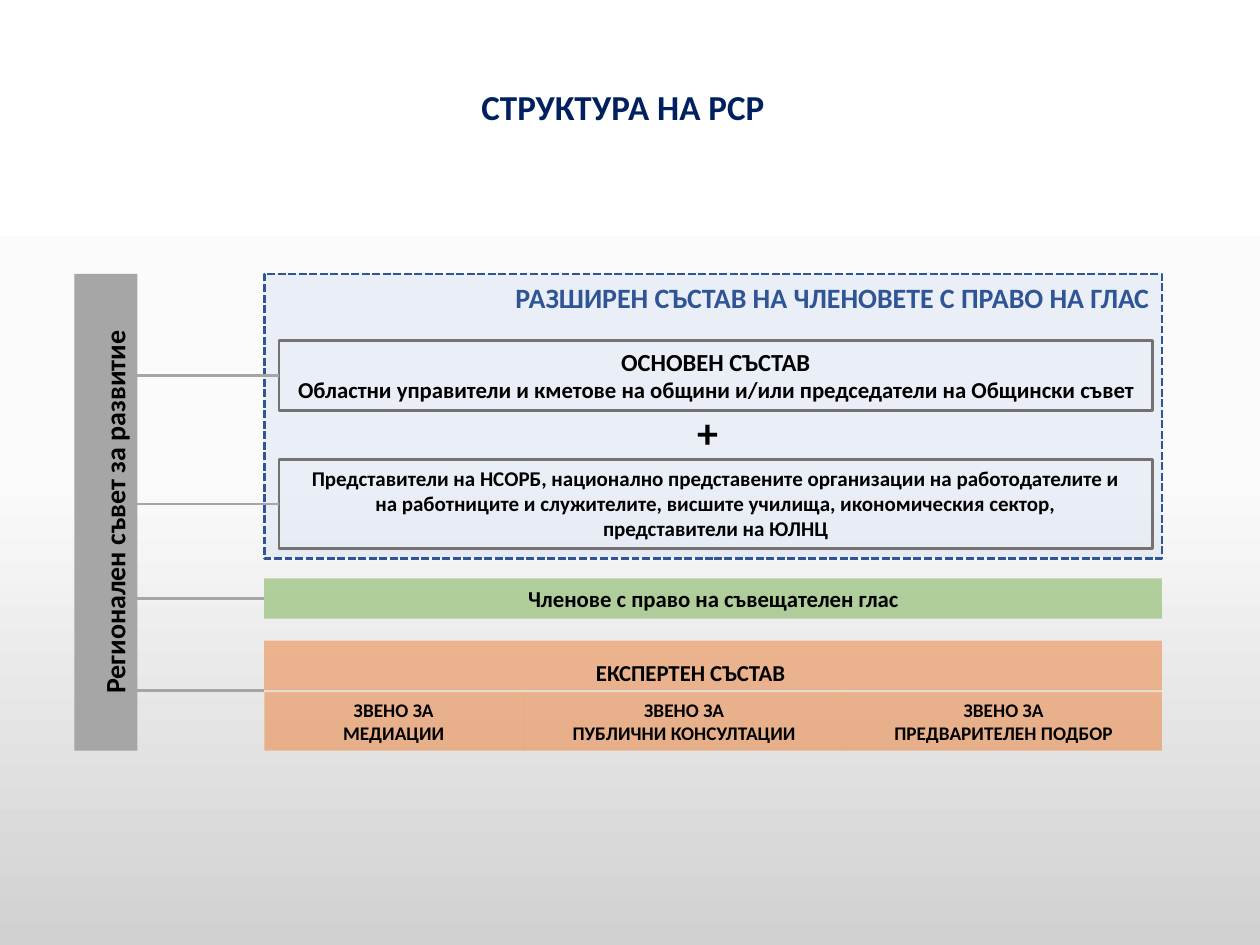
"""Build a one-page diagram of the structure of a regional development council."""
from copy import deepcopy

from lxml import etree
from pptx import Presentation
from pptx.dml.color import RGBColor
from pptx.enum.dml import MSO_LINE
from pptx.enum.shapes import MSO_CONNECTOR, MSO_SHAPE
from pptx.enum.text import MSO_ANCHOR, MSO_AUTO_SIZE, PP_ALIGN
from pptx.oxml.ns import qn
from pptx.util import Pt

RECTANGLE = MSO_SHAPE.RECTANGLE
STRAIGHT = MSO_CONNECTOR.STRAIGHT
DASHED = MSO_LINE.SQUARE_DOT
TOP, MIDDLE = MSO_ANCHOR.TOP, MSO_ANCHOR.MIDDLE
CENTER, RIGHT = PP_ALIGN.CENTER, PP_ALIGN.RIGHT
NO_AUTOFIT = MSO_AUTO_SIZE.NONE
LEFT_SIDE = 1

COLORS = {
    "text": "000000", "title": "002060", "heading": "2F5597",
    "panel": "DAE3F3", "frame": "767171", "bar": "A6A6A6",
    "link": "A5A5A5", "advisory": "70AD47", "expert": "ED7D31",
}
BACKDROP = [(0, "FFFFFF"), (0.5, "FBFBFB"), (1, "D1D1D1")]


class Diagram:
    """Hold the style and the current page, and draw each kind of element."""

    font = "Calibri"
    line_width = 1.5

    def __init__(self, page):
        self.page = page

    def color(self, name):
        return RGBColor.from_string(COLORS[name])

    def backdrop(self, stops):
        fill = self.page.background.fill
        fill.gradient()
        fill.gradient_angle = 270
        stop_list = self.page.element.find(".//" + qn("a:gsLst"))
        stop_list.insert(1, deepcopy(stop_list[0]))
        for stop, (position, value) in zip(fill.gradient_stops, stops):
            stop.position = position
            stop.color.rgb = RGBColor.from_string(value)

    def set_text(self, shape, lines, color="text", align=CENTER, anchor=TOP,
                 spacing=1, wrap=True, right_inset=7.2):
        frame = shape.text_frame
        frame.auto_size = NO_AUTOFIT
        frame.word_wrap = wrap
        frame.vertical_anchor = anchor
        frame.margin_right = Pt(right_inset)
        frame.text = "\n".join(text for text, size in lines)
        for para, (text, size) in zip(frame.paragraphs, lines):
            para.alignment = align
            para.line_spacing = spacing
            para.font.name = self.font
            para.font.size = Pt(size)
            para.font.bold = True
            para.font.color.rgb = self.color(color)

    def title(self, bounds, text):
        title = self.page.shapes.title
        title.left, title.top, title.width, title.height = map(Pt, bounds)
        self.set_text(title, [(text, 20)], "title", spacing=1.5, wrap=False)

    def label(self, bounds, text, size):
        box = self.page.shapes.add_textbox(*map(Pt, bounds))
        self.set_text(box, [(text, size)], wrap=False)

    def box(self, bounds, lines, fill=None, opacity=100, line=None,
            dash=None, **text_style):
        box = self.page.shapes.add_shape(RECTANGLE, *map(Pt, bounds))
        box.shadow.inherit = False
        if fill:
            box.fill.solid()
            box.fill.fore_color.rgb = self.color(fill)
            if opacity < 100:
                tint = box.element.spPr.find(".//" + qn("a:srgbClr"))
                etree.SubElement(tint, qn("a:alpha"), val=str(opacity * 1000))
        else:
            box.fill.background()
        if line:
            box.line.color.rgb = self.color(line)
            box.line.width = Pt(self.line_width)
            if dash:
                box.line.dash_style = dash
        else:
            box.line.fill.background()
        self.set_text(box, lines, **text_style)
        return box

    def upright_bar(self, left, top, width, height, text):
        offset = (height - width) / 2
        bar = self.box((left - offset, top + offset, height, width),
                       [(text, 16)], "bar", anchor=MIDDLE, spacing=1.5)
        bar.rotation = 270

    def link(self, start, end, y, target=None):
        link = self.page.shapes.add_connector(
            STRAIGHT, Pt(start), Pt(y), Pt(end), Pt(y))
        link.line.color.rgb = self.color("link")
        link.line.width = Pt(self.line_width)
        etree.SubElement(link.element.spPr, qn("a:effectLst"))
        if target is not None:
            link.end_connect(target, LEFT_SIDE)


def main():
    deck = Presentation()
    deck.slide_width, deck.slide_height = Pt(720), Pt(540)
    diagram = Diagram(deck.slides.add_slide(deck.slide_layouts[5]))
    diagram.backdrop(BACKDROP)
    diagram.title((267, 33, 178, 44), "СТРУКТУРА НА РСР")

    left, width = 151, 513
    inner_left, inner_width = 159.5, 499
    bar_left, bar_width = 42.5, 36
    bar_right = bar_left + bar_width

    diagram.box((left, 156.5, width, 162.5),
                [("РАЗШИРЕН СЪСТАВ НА ЧЛЕНОВЕТЕ С ПРАВО НА ГЛАС", 16)],
                "panel", 51, "heading", DASHED, color="heading", align=RIGHT)
    diagram.upright_bar(bar_left, 156.5, bar_width, 272.5,
                        "Регионален съвет за развитие")
    core = diagram.box(
        (inner_left, 194.5, inner_width, 40),
        [("ОСНОВЕН СЪСТАВ", 14),
         ("Областни управители и кметове на общини и/или "
          "председатели на Общински съвет", 13)], line="frame")
    partners = diagram.box(
        (inner_left, 262.5, inner_width, 51),
        [("Представители на НСОРБ, национално представените "
          "организации на работодателите и", 12),
         ("на работниците и служителите, висшите училища, "
          "икономическия сектор,", 12),
         ("представители на ЮЛНЦ", 12)], line="frame")
    diagram.label((391, 229, 26.5, 36), "+", 24)
    advisory = diagram.box((left, 330.5, width, 23),
                           [("Членове с право на съвещателен глас", 13)],
                           "advisory", 50)

    expert_top, expert_height = 366, 28.5
    diagram.box((left, expert_top, width, expert_height),
                [("ЕКСПЕРТЕН СЪСТАВ", 13)], "expert", 50,
                anchor=MIDDLE, spacing=1.5, right_inset=33)
    unit_left = left
    for unit, unit_width in [("МЕДИАЦИИ", 148),
                             ("ПУБЛИЧНИ КОНСУЛТАЦИИ", 184),
                             ("ПРЕДВАРИТЕЛЕН ПОДБОР", 181)]:
        diagram.box((unit_left, 395.3, unit_width, 33.7),
                    [("ЗВЕНО ЗА", 11), (unit, 11)], "expert", 50,
                    anchor=MIDDLE)
        unit_left += unit_width

    diagram.link(bar_right, inner_left, 214.5, core)
    diagram.link(bar_right, inner_left, 288, partners)
    diagram.link(bar_right, left, 342, advisory)
    diagram.link(bar_right, left, expert_top + expert_height)
    deck.save("out.pptx")


if __name__ == "__main__":
    main()
